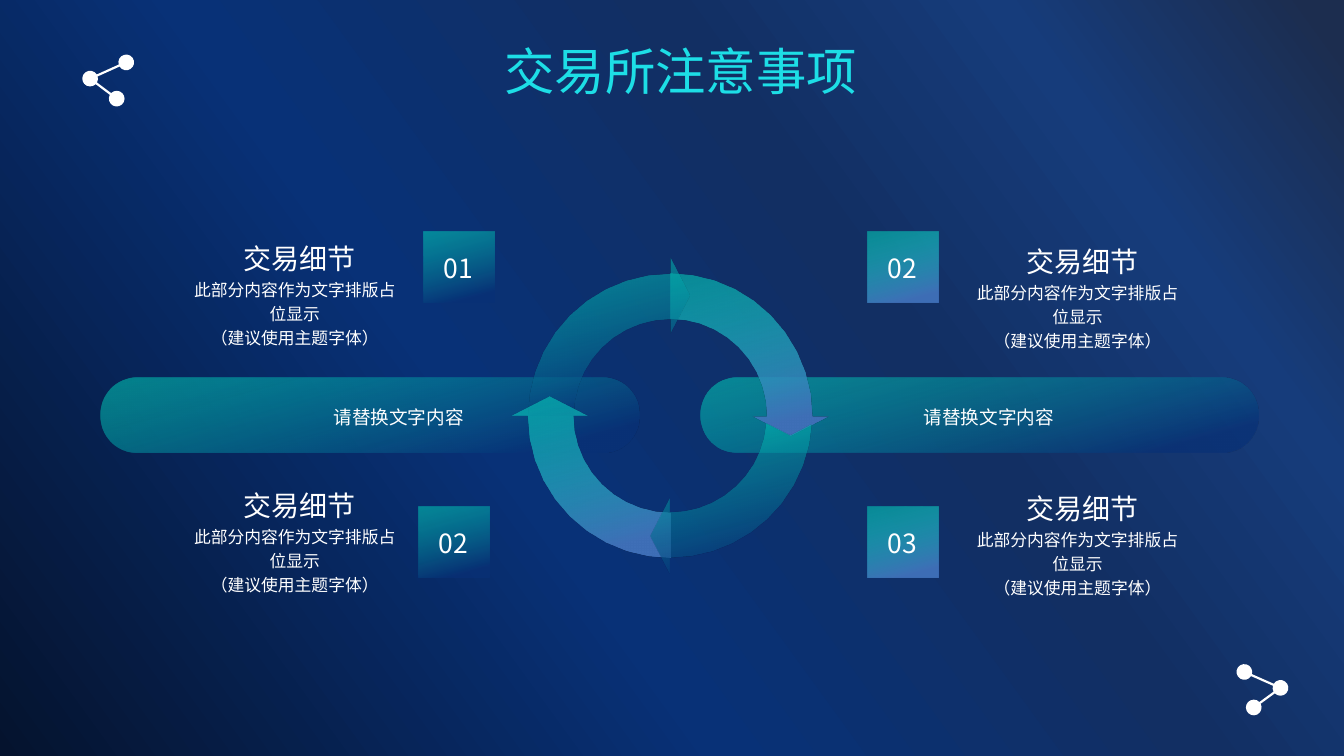
from math import asin, atan2, ceil, cos, degrees, radians, sin
from lxml.etree import SubElement
from pptx import Presentation
from pptx.dml.color import RGBColor
from pptx.enum.shapes import MSO_SHAPE as Shape
from pptx.enum.text import MSO_ANCHOR as Anchor, MSO_AUTO_SIZE as AutoSize, PP_ALIGN as Align
from pptx.oxml.ns import qn
from pptx.util import Pt

TITLE = "交易所注意事项"
DETAIL_HEAD = "交易细节"
DETAIL_BODY = "此部分内容作为文字排版占位显示\n（建议使用主题字体）"
BAR_LABEL = "请替换文字内容"

BARS = [(71.6, 385.2, 223.4), (500.5, 398.9, 645.1)]
BADGES = [("01", 302.7, 165.6, "deep"), ("02", 620, 165.6, "bright"),
          ("02", 299.3, 362.2, "deep"), ("03", 620, 362.2, "bright")]
DETAILS = [(136.2, 163.6), (136.2, 340), (695.6, 165.8), (695.6, 342.2)]
ARROWS = [(270, "bright", False), (180, "deep", False),
          (90, "bright", False), (0, "deep", True)]
NETWORKS = [[(889.3, 480), (915.1, 491.4), (896, 505.4)],
            [(90.2, 44.6), (64.4, 56.2), (83.4, 70.5)]]

THEME = {
    "font": "Noto Sans CJK SC",
    "text": "FFFFFF",
    "title": "1DDEE6",
    "sizes": {"title": 36, "head": 20, "badge": 18.9, "label": 13.3, "body": 12},
    "sky": ([(0, "05132E", 100), (38, "083177", 100), (64, "122F63", 100),
             (82, "163C7B", 100), (98, "1C2D4F", 100)], 324),
    "deep": ([(13, "083177", 69), (100, "02E1C2", 50)], 255),
    "bright": ([(13, "3F6FB7", 100), (100, "02E1C2", 50)], 255),
}

RING_X, RING_Y = 479, 297
OUTER, INNER = 101.3, 68.9
WING_OUT, WING_IN = 113, 58.6
TIP_RADIUS, TIP_DEPTH = 85.8, 14
NODE_RADIUS, LINK_HALF_ANGLE = 5.6, 8
RING_STEP, NODE_STEP = 9, 24
BAR_TOP, BAR_HEIGHT, BADGE_SIDE = 270, 53.3, 50.4

deck = Presentation()
deck.slide_width, deck.slide_height = Pt(960.5), Pt(540)
slide = deck.slides.add_slide(deck.slide_layouts[6])


def paint_gradient(owner, fill, name):
    stops, angle = THEME[name]
    fill.gradient()
    fill.gradient_angle = 360 - angle
    stop_list = next(owner.element.iter(qn("a:gsLst")))
    stop_list.clear()
    for place, color, opacity in stops:
        stop = SubElement(stop_list, qn("a:gs"), pos=str(place * 1000))
        tint = SubElement(stop, qn("a:srgbClr"), val=color)
        if opacity < 100:
            SubElement(tint, qn("a:alpha"), val=str(opacity * 1000))


def finish(shape, gradient=None):
    shape.shadow.inherit = False
    shape.line.fill.background()
    if gradient:
        paint_gradient(shape, shape.fill, gradient)
    else:
        shape.fill.solid()
        shape.fill.fore_color.rgb = RGBColor.from_string(THEME["text"])


def write(holder, text, role, anchor=Anchor.TOP, spacing=None, wrap=True, inset=0):
    frame = holder.text_frame
    frame.word_wrap, frame.vertical_anchor = wrap, anchor
    if inset is not None:
        frame.margin_left = frame.margin_right = Pt(inset)
        frame.margin_top = frame.margin_bottom = Pt(inset)
    paragraph = frame.paragraphs[0]
    paragraph.text = text
    paragraph.alignment = Align.CENTER
    paragraph.line_spacing = spacing
    paragraph.font.size = Pt(THEME["sizes"][role])
    paragraph.font.name = THEME["font"]
    color = THEME["title"] if role == "title" else THEME["text"]
    paragraph.font.color.rgb = RGBColor.from_string(color)
    for properties in holder.element.iter(qn("a:defRPr")):
        SubElement(properties, qn("a:ea"), typeface=THEME["font"])


def add_text(shapes, text, box, role, **layout):
    textbox = shapes.add_textbox(*map(Pt, box))
    write(textbox, text, role, **layout)
    return textbox


def arc(center, radius, start, end, step):
    count = ceil(abs(end - start) / step)
    angles = [radians(start + (end - start) * i / count) for i in range(count + 1)]
    return [(center[0] + radius * cos(a), center[1] + radius * sin(a)) for a in angles]


def add_outline(points, gradient=None):
    corners = [(Pt(x), Pt(y)) for x, y in points]
    builder = slide.shapes.build_freeform(*corners[0])
    builder.add_line_segments(corners[1:], close=True)
    outline = builder.convert_to_shape()
    finish(outline, gradient)
    return outline


def bearing(origin, target):
    return degrees(atan2(target[1] - origin[1], target[0] - origin[0]))


def add_network(first, hub, last):
    to_first, to_last = bearing(hub, first), bearing(hub, last)
    gap = LINK_HALF_ANGLE
    points = []
    for node, start, end in [(first, to_first + 180, to_first + 180),
                             (hub, to_first, to_last),
                             (last, to_last + 180, to_last + 180),
                             (hub, to_last, to_first)]:
        sweep = (end - start) % 360 or 360
        points += arc(node, NODE_RADIUS, start + gap, start + sweep - gap, NODE_STEP)
    add_outline(points)


def add_ring_arrow(start, gradient, notched):
    center = (RING_X, RING_Y)

    def at(turn, radius, ahead):
        a = radians(turn)
        return (RING_X + radius * cos(a) - ahead * sin(a),
                RING_Y + radius * sin(a) + ahead * cos(a))

    outer_skip = inner_skip = 0
    tail = []
    if notched:
        outer_skip = degrees(asin(6 / OUTER))
        inner_skip = degrees(asin(5.4 / INNER))
        tail = [at(start, TIP_RADIUS, TIP_DEPTH)]
    end = start + 90
    head = [at(end, WING_OUT, 0), at(end, TIP_RADIUS, TIP_DEPTH), at(end, WING_IN, 0)]
    add_outline(arc(center, OUTER, start + outer_skip, end, RING_STEP) + head
                + arc(center, INNER, end, start + inner_skip, RING_STEP) + tail, gradient)


def add_bar_label(left, top=288, width=123.1, height=17.3):
    right, bottom = left + width, top + height
    label = add_outline([(left, top), (right, top), (right, bottom), (left, bottom)])
    label.fill.background()
    write(label, BAR_LABEL, "label", Anchor.MIDDLE, 1.2)
    label.text_frame.paragraphs[0].space_before = Pt(7.5)


paint_gradient(slide, slide.background.fill, "sky")
add_network(*NETWORKS[0])
title = add_text(slide.shapes, TITLE, (276.5, 25.2, 419.8, 51), "title", inset=None)
title.text_frame.auto_size = AutoSize.SHAPE_TO_FIT_TEXT
add_network(*NETWORKS[1])

for left, width, _ in BARS:
    bar = slide.shapes.add_shape(Shape.ROUNDED_RECTANGLE, Pt(left), Pt(BAR_TOP),
                                 Pt(width), Pt(BAR_HEIGHT))
    bar.adjustments[0] = 0.49
    finish(bar, "deep")
for _, _, label_left in BARS:
    add_bar_label(label_left)

for arrow in ARROWS:
    add_ring_arrow(*arrow)

for number, left, top, gradient in BADGES:
    badge = slide.shapes.add_shape(Shape.ROUNDED_RECTANGLE, Pt(left), Pt(top),
                                   Pt(BADGE_SIDE), Pt(BADGE_SIDE))
    badge.adjustments[0] = 0
    finish(badge, gradient)
    add_text(slide.shapes, number, (left + 4.2, top + 6.5, 41, 33.8), "badge",
             anchor=Anchor.MIDDLE, spacing=1.2)

for left, top in DETAILS:
    detail = slide.shapes.add_group_shape().shapes
    add_text(detail, DETAIL_HEAD, (left, top, 156.2, 33.1), "head",
             anchor=Anchor.BOTTOM, wrap=False)
    add_text(detail, DETAIL_BODY, (left, top + 33.1, 149, 23), "body", spacing=1.2)

deck.save("out.pptx")
